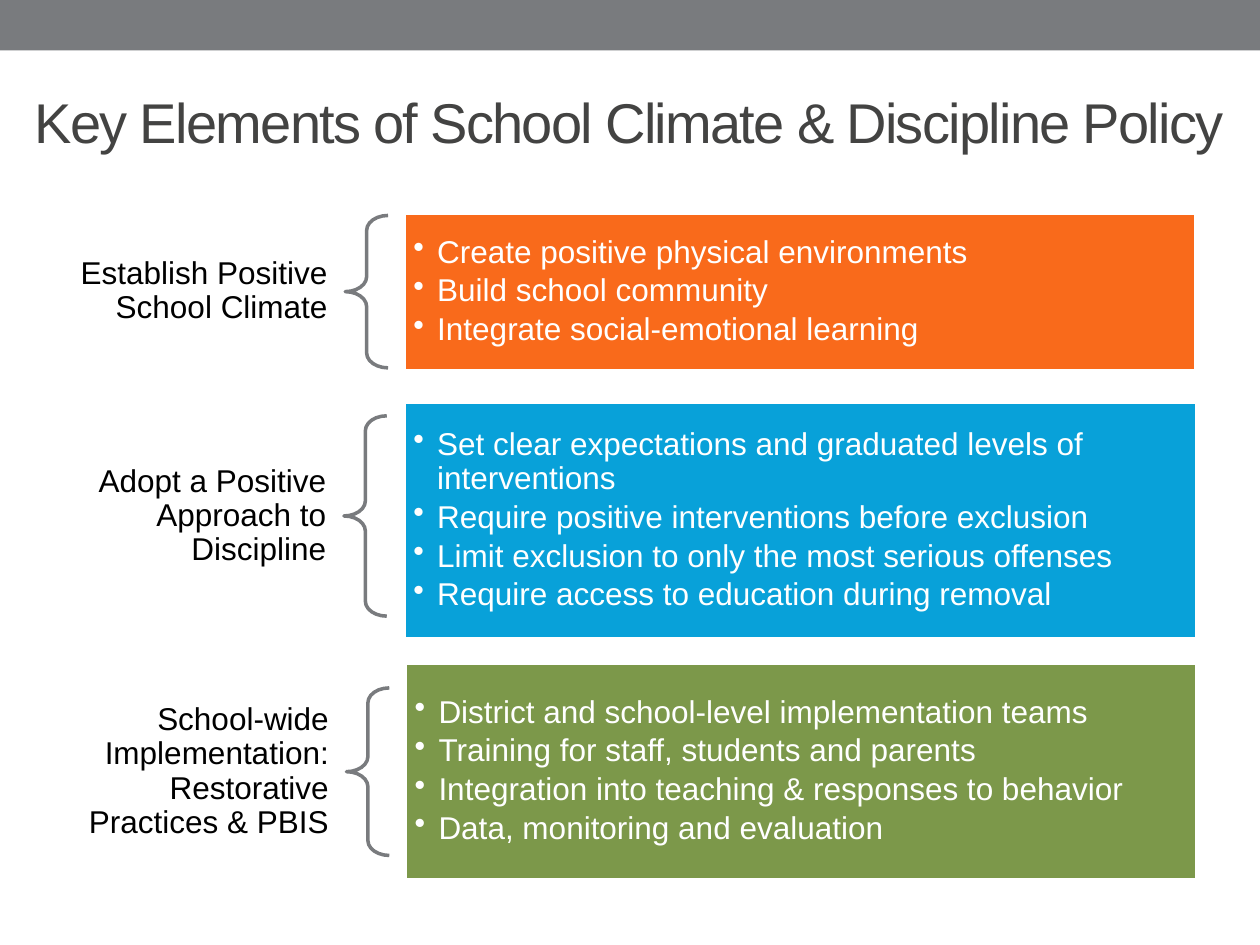
from dataclasses import dataclass

from lxml import etree
from pptx import Presentation
from pptx.dml.color import RGBColor
from pptx.enum import shapes, text
from pptx.oxml import ns
from pptx.util import Inches, Pt


@dataclass(frozen=True)
class Theme:
    font: str = "Arial"
    title_size: int = 32
    body_size: int = 18
    title: str = "434342"
    label: str = "000000"
    light: str = "FFFFFF"
    gray: str = "797B7E"
    orange: str = "F96A1B"
    blue: str = "08A1D9"
    green: str = "7C984A"


THEME = Theme()
LABEL_LEFT, LABEL_HEIGHT = 0.5, 1.21
BRACE_WIDTH = 0.34
INDENT = 0.19

# Each row: label, brace (left, top, height), box (left, top, width, height), fill, points
ROWS = [
    ("Establish Positive School Climate",
     (2.74, 1.71, 1.21), (3.21, 1.69, 6.28, 1.25), THEME.orange,
     ["Create positive physical environments",
      "Build school community",
      "Integrate social-emotional learning"]),
    ("Adopt a Positive Approach to Discipline",
     (2.73, 3.3, 1.59), (3.21, 3.19, 6.29, 1.88), THEME.blue,
     ["Set clear expectations and graduated levels of interventions",
      "Require positive interventions before exclusion",
      "Limit exclusion to only the most serious offenses",
      "Require access to education during removal"]),
    ("School-wide Implementation: Restorative Practices & PBIS",
     (2.75, 5.46, 1.33), (3.22, 5.26, 6.28, 1.72), THEME.green,
     ["District and school-level implementation teams",
      "Training for staff, students and parents",
      "Integration into teaching & responses to behavior",
      "Data, monitoring and evaluation"]),
]


def set_attrs(obj, values):
    for name, value in values.items():
        setattr(obj, name, value)


def set_frame(tf, inset_x, inset_y):
    set_attrs(tf, {
        "word_wrap": True,
        "auto_size": text.MSO_AUTO_SIZE.NONE,
        "vertical_anchor": text.MSO_ANCHOR.MIDDLE,
        "margin_left": Inches(inset_x), "margin_right": Inches(inset_x),
        "margin_top": Inches(inset_y), "margin_bottom": Inches(inset_y),
    })


def add_run(p, words, size, color):
    r = p.add_run()
    r.text = words
    set_attrs(r.font, {"name": THEME.font, "size": Pt(size)})
    r.font.color.rgb = RGBColor.from_string(color)
    return r


def add_bullet(p):
    pPr = p._p.get_or_add_pPr()
    pPr.set("marL", str(Inches(INDENT)))
    pPr.set("indent", str(-Inches(INDENT)))
    etree.SubElement(pPr, ns.qn("a:buChar")).set("char", "•")


def add_shape(s, kind, box, fill=None, line=None):
    sp = s.shapes.add_shape(kind, *map(Inches, box))
    sp.shadow.inherit = False
    if fill:
        sp.fill.solid()
        sp.fill.fore_color.rgb = RGBColor.from_string(fill)
    else:
        sp.fill.background()
    if line:
        sp.line.color.rgb = RGBColor.from_string(line)
        sp.line.width = Pt(2)
    else:
        sp.line.fill.background()
    return sp


def add_title(s, words):
    sp = s.shapes.title
    set_attrs(sp, dict(zip(("left", "top", "width", "height"),
                           map(Inches, (0.08, 0.42, 9.83, 1.08)))))
    set_frame(sp.text_frame, 0.1, 0.05)
    p = sp.text_frame.paragraphs[0]
    p.alignment = text.PP_ALIGN.CENTER
    r = add_run(p, words, THEME.title_size, THEME.title)
    r.font._element.set("spc", "-100")


def add_label(s, words, right, middle):
    box = (LABEL_LEFT, middle - LABEL_HEIGHT / 2, right - LABEL_LEFT, LABEL_HEIGHT)
    tf = s.shapes.add_textbox(*map(Inches, box)).text_frame
    set_frame(tf, 0.14, 0.05)
    p = tf.paragraphs[0]
    set_attrs(p, {"alignment": text.PP_ALIGN.RIGHT, "line_spacing": 0.9,
                  "space_after": Pt(6.3)})
    add_run(p, words, THEME.body_size, THEME.label)


def add_brace(s, left, top, height):
    sp = add_shape(s, shapes.MSO_SHAPE.LEFT_BRACE,
                   (left, top, BRACE_WIDTH, height), line=THEME.gray)
    sp.adjustments[0] = 0.35


def add_list_box(s, box, fill, points):
    sp = add_shape(s, shapes.MSO_SHAPE.RECTANGLE, box, fill, THEME.light)
    tf = sp.text_frame
    set_frame(tf, 0.07, 0.07)
    for i, point in enumerate(points):
        p = tf.add_paragraph() if i else tf.paragraphs[0]
        set_attrs(p, {"level": 1, "alignment": text.PP_ALIGN.LEFT,
                      "line_spacing": 0.9, "space_after": Pt(2.7)})
        add_bullet(p)
        add_run(p, point, THEME.body_size, THEME.light)


def main():
    prs = Presentation()
    set_attrs(prs, {"slide_width": Inches(10), "slide_height": Inches(7.5)})
    s = prs.slides.add_slide(prs.slide_layouts[5])

    # Top band and title
    add_shape(s, shapes.MSO_SHAPE.RECTANGLE, (0, 0, 10, 0.4), THEME.gray)
    add_title(s, "Key Elements of School Climate & Discipline Policy")

    # One row per policy element
    for label, brace, box, fill, points in ROWS:
        left, top, height = brace
        add_label(s, label, left, top + height / 2)
        add_brace(s, *brace)
        add_list_box(s, box, fill, points)

    prs.save("out.pptx")


if __name__ == "__main__":
    main()
